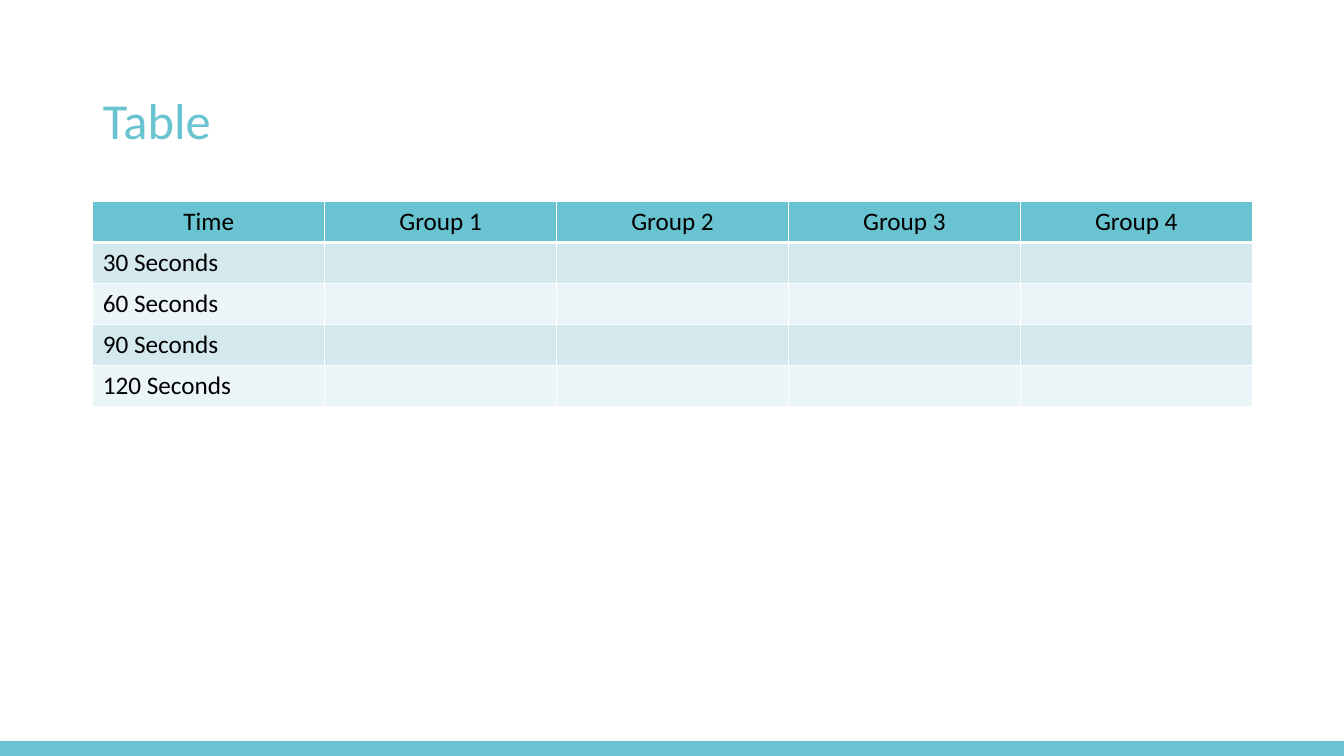
from dataclasses import dataclass

from lxml.etree import SubElement
from pptx import Presentation
from pptx.dml.color import RGBColor as RGB
from pptx.enum.shapes import MSO_SHAPE as SHAPE
from pptx.enum.text import MSO_ANCHOR as ANCHOR, PP_ALIGN as ALIGN
from pptx.oxml.ns import qn
from pptx.util import Inches, Pt


@dataclass(frozen=True)
class Theme:
    font: str = "Calibri"
    accent: str = "69C3D1"
    bands: tuple = ("D4E9EE", "EBF5F7")
    border: str = "FFFFFF"
    text: str = "000000"
    title_size: int = 36
    cell_size: int = 18
    line: int = 1
    header_line: int = 3


THEME = Theme()
GROUPS = 4
TIMES = (30, 60, 90, 120)


def format_text(p, size, color, align):
    p.alignment = align
    values = {"name": THEME.font, "size": Pt(size), "bold": False}
    for name, value in values.items():
        setattr(p.font, name, value)
    p.font.color.rgb = RGB.from_string(color)


def add_footer_bar(slide, left, top, width, height):
    sp = slide.shapes.add_shape(SHAPE.RECTANGLE, Inches(left), Inches(top),
                                Inches(width), Inches(height))
    sp.shadow.inherit = False
    sp.fill.solid()
    sp.fill.fore_color.rgb = RGB.from_string(THEME.accent)
    sp.line.fill.background()


def add_title(slide, text, left, top, width, height):
    sp = slide.shapes.title
    box = {"left": left, "top": top, "width": width, "height": height}
    for name, value in box.items():
        setattr(sp, name, Inches(value))
    tf = sp.text_frame
    tf.text = text
    tf.word_wrap = True
    tf.vertical_anchor = ANCHOR.MIDDLE
    p = tf.paragraphs[0]
    p.line_spacing = 0.9
    format_text(p, THEME.title_size, THEME.accent, ALIGN.LEFT)


def set_borders(cell, bottom):
    tc_pr = cell._tc.get_or_add_tcPr()
    widths = {"lnL": THEME.line, "lnR": THEME.line, "lnT": THEME.line, "lnB": bottom}
    for side, width in widths.items():
        ln = SubElement(tc_pr, qn(f"a:{side}"), w=str(Pt(width)))
        fill = SubElement(ln, qn("a:solidFill"))
        SubElement(fill, qn("a:srgbClr"), val=THEME.border)


def add_table(slide, rows, left, top, width, height):
    table = slide.shapes.add_table(len(rows), len(rows[0]), Inches(left), Inches(top),
                                   Inches(width), Inches(height)).table
    for i, row in enumerate(rows):
        header = i == 0
        color = THEME.accent if header else THEME.bands[(i - 1) % 2]
        for j, text in enumerate(row):
            cell = table.cell(i, j)
            set_borders(cell, THEME.header_line if header else THEME.line)
            cell.fill.solid()
            cell.fill.fore_color.rgb = RGB.from_string(color)
            cell.text = text
            format_text(cell.text_frame.paragraphs[0], THEME.cell_size, THEME.text,
                        ALIGN.CENTER if header else ALIGN.LEFT)


def main():
    prs = Presentation()
    prs.slide_width, prs.slide_height = Inches(13.33), Inches(7.5)
    slide = prs.slides.add_slide(prs.slide_layouts[5])
    rows = [["Time"] + [f"Group {n}" for n in range(1, GROUPS + 1)]]
    rows += [[f"{t} Seconds"] + [""] * GROUPS for t in TIMES]
    add_footer_bar(slide, 0, 7.35, 13.33, 0.15)
    add_title(slide, "Table", 0.92, 0.89, 11.5, 0.66)
    add_table(slide, rows, 0.92, 2, 11.5, 2.03)
    prs.save("out.pptx")


if __name__ == "__main__":
    main()
